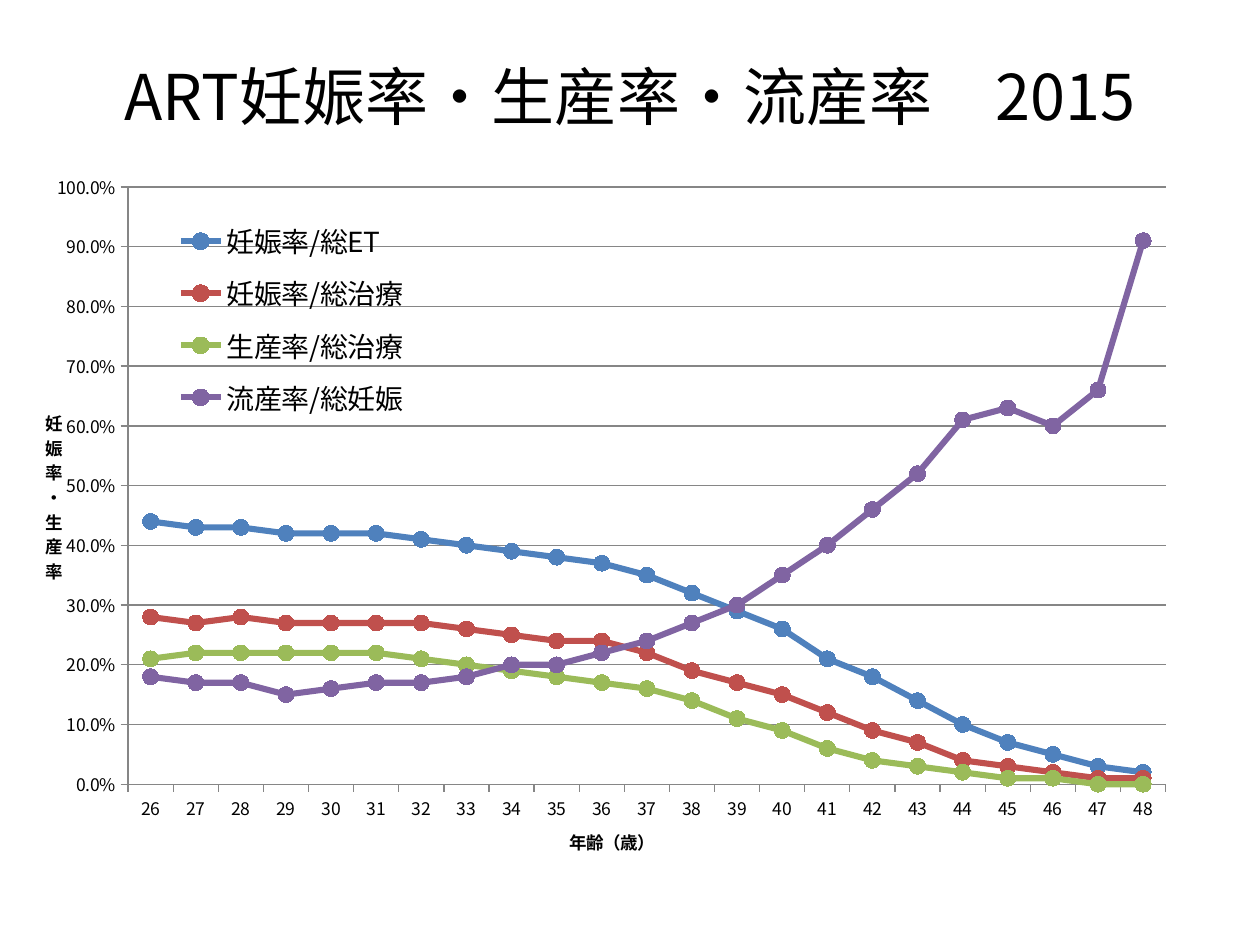
import pptx
import pptx.chart.data
import pptx.dml.color
import pptx.enum.chart
import pptx.enum.text
import pptx.oxml
import pptx.oxml.ns
import pptx.util

Pt = pptx.util.Pt
qn = pptx.oxml.ns.qn

FONT = "Noto Sans CJK JP"
COLORS = {
    "text": "000000",
    "grid": "868686",
    "blue": "4F81BD",
    "red": "C0504D",
    "green": "9BBB59",
    "purple": "8064A2",
}

TITLE = "ART妊娠率・生産率・流産率　2015"
AGE_TITLE = "年齢（歳）"
RATE_TITLE = "妊娠率・生産率"
AGES = range(26, 49)
# Name, colour, rates by age
RATES = [
    ("妊娠率/総ET", "blue",
     [0.44, 0.43, 0.43, 0.42, 0.42, 0.42, 0.41, 0.4, 0.39, 0.38, 0.37, 0.35,
      0.32, 0.29, 0.26, 0.21, 0.18, 0.14, 0.1, 0.07, 0.05, 0.03, 0.02]),
    ("妊娠率/総治療", "red",
     [0.28, 0.27, 0.28, 0.27, 0.27, 0.27, 0.27, 0.26, 0.25, 0.24, 0.24, 0.22,
      0.19, 0.17, 0.15, 0.12, 0.09, 0.07, 0.04, 0.03, 0.02, 0.01, 0.01]),
    ("生産率/総治療", "green",
     [0.21, 0.22, 0.22, 0.22, 0.22, 0.22, 0.21, 0.2, 0.19, 0.18, 0.17, 0.16,
      0.14, 0.11, 0.09, 0.06, 0.04, 0.03, 0.02, 0.01, 0.01, 0, 0]),
    ("流産率/総妊娠", "purple",
     [0.18, 0.17, 0.17, 0.15, 0.16, 0.17, 0.17, 0.18, 0.2, 0.2, 0.22, 0.24,
      0.27, 0.3, 0.35, 0.4, 0.46, 0.52, 0.61, 0.63, 0.6, 0.66, 0.91]),
]

CHART_WIDTH, CHART_HEIGHT = 672, 398


def rgb(name):
    return pptx.dml.color.RGBColor.from_string(COLORS[name])


def format_font(font, size, bold=False):
    font.name = FONT
    font.size = Pt(size)
    font.bold = bold
    font.color.rgb = rgb("text")


def write_text(frame, text, size, bold=False):
    paragraph = frame.paragraphs[0]
    paragraph.alignment = pptx.enum.text.PP_ALIGN.CENTER
    run = paragraph.add_run()
    run.text = text
    format_font(run.font, size, bold)


def set_east_asian_font(element):
    """Give East Asian characters the typeface already set for Latin ones."""
    for latin in list(element.iter(qn("a:latin"))):
        east_asian = pptx.oxml.parse_xml(
            f'<a:ea {pptx.oxml.ns.nsdecls("a")} typeface="{FONT}"/>')
        latin.addnext(east_asian)


def place(element, after, left, top, width=None, height=None, inner=False):
    """Position a chart part, in points from the chart's corner."""
    for old in element.findall(qn("c:layout")):
        element.remove(old)
    parts = '<c:layoutTarget val="inner"/>' if inner else ""
    parts += '<c:xMode val="edge"/><c:yMode val="edge"/>'
    for tag, length, whole in (
            ("x", left, CHART_WIDTH), ("y", top, CHART_HEIGHT),
            ("w", width, CHART_WIDTH), ("h", height, CHART_HEIGHT)):
        if length is not None:
            parts += f'<c:{tag} val="{length / whole:.4f}"/>'
    layout = pptx.oxml.parse_xml(
        f'<c:layout {pptx.oxml.ns.nsdecls("c")}>'
        f"<c:manualLayout>{parts}</c:manualLayout></c:layout>")
    if after is None:
        element.insert(0, layout)
    else:
        element.find(qn(after)).addnext(layout)


def format_axis(axis, title, left, top):
    axis.major_tick_mark = pptx.enum.chart.XL_TICK_MARK.OUTSIDE
    axis.minor_tick_mark = pptx.enum.chart.XL_TICK_MARK.NONE
    format_font(axis.tick_labels.font, 10)
    axis.format.line.color.rgb = rgb("grid")
    axis.format.line.width = Pt(0.75)
    write_text(axis.axis_title.text_frame, title, size=10, bold=True)
    place(axis.axis_title._element, "c:tx", left, top)


def add_rate_chart(slide):
    data = pptx.chart.data.CategoryChartData(number_format="0.0%")
    data.categories = [str(age) for age in AGES]
    for name, _, rates in RATES:
        data.add_series(name, rates)
    chart = slide.shapes.add_chart(
        pptx.enum.chart.XL_CHART_TYPE.LINE_MARKERS,
        Pt(24), Pt(93.6), Pt(CHART_WIDTH), Pt(CHART_HEIGHT), data).chart
    chart.has_title = False
    format_font(chart.font, 10)
    chart.plots[0].vary_by_categories = False

    for series, (_, color, _) in zip(chart.plots[0].series, RATES):
        series.smooth = False
        series.format.line.color.rgb = rgb(color)
        series.format.line.width = Pt(3.5)
        series.marker.style = pptx.enum.chart.XL_MARKER_STYLE.CIRCLE
        series.marker.size = 9
        series.marker.format.fill.solid()
        series.marker.format.fill.fore_color.rgb = rgb(color)
        series.marker.format.line.color.rgb = rgb(color)

    format_axis(chart.category_axis, AGE_TITLE, 299.5, 382.5)
    rate_axis = chart.value_axis
    format_axis(rate_axis, RATE_TITLE, 0, 140)
    body = rate_axis.axis_title.text_frame._txBody.find(qn("a:bodyPr"))
    body.set("rot", "0")
    body.set("vert", "wordArtVert")
    rate_axis.minimum_scale = 0
    rate_axis.maximum_scale = 1
    rate_axis.major_unit = 0.1
    rate_axis.tick_labels.number_format = "0.0%"
    rate_axis.tick_labels.number_format_is_linked = False
    rate_axis.has_major_gridlines = True
    rate_axis.major_gridlines.format.line.color.rgb = rgb("grid")
    rate_axis.major_gridlines.format.line.width = Pt(0.75)

    chart.has_legend = True
    chart.legend.position = pptx.enum.chart.XL_LEGEND_POSITION.RIGHT
    chart.legend.include_in_layout = True
    format_font(chart.legend.font, 16)
    place(chart.legend._element, "c:legendPos", 72.3, 26, 141, 128)
    plot_area = chart._chartSpace.chart.plotArea
    place(plot_area, None, 49.2, 13.4, 593, 345.5, inner=True)
    set_east_asian_font(chart._chartSpace)


def main():
    presentation = pptx.Presentation()
    presentation.slide_width = Pt(720)
    presentation.slide_height = Pt(540)
    slide = presentation.slides.add_slide(presentation.slide_layouts[5])

    title = slide.shapes.title
    title.left, title.top, title.width, title.height = (
        Pt(36), Pt(21.6), Pt(648), Pt(65.5))
    title.text_frame.vertical_anchor = pptx.enum.text.MSO_ANCHOR.MIDDLE
    write_text(title.text_frame, TITLE, size=36)
    set_east_asian_font(title._element)

    add_rate_chart(slide)
    presentation.save("out.pptx")


if __name__ == "__main__":
    main()
